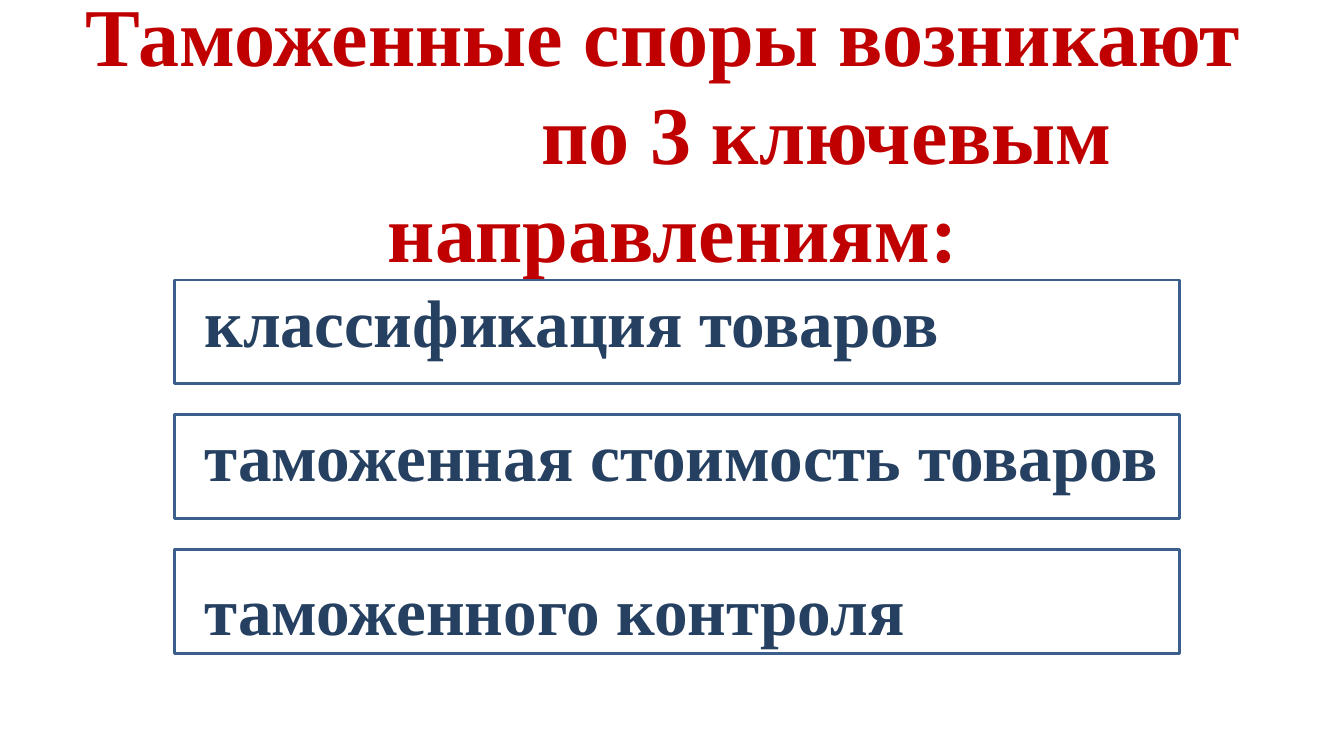
from pptx import Presentation
from pptx.dml.color import RGBColor
from pptx.enum.shapes import MSO_SHAPE
from pptx.enum.text import MSO_ANCHOR, PP_ALIGN
from pptx.util import Pt

RED = RGBColor(0xC0, 0x00, 0x00)
NAVY = RGBColor(0x25, 0x40, 0x61)
BLUE = RGBColor(0x3A, 0x5F, 0x8C)
WHITE = RGBColor(0xFF, 0xFF, 0xFF)
FONT = "Times New Roman"


def add_text(p, text, size=36, color=NAVY, align=PP_ALIGN.LEFT, spacing=None, left=0, right=0):
    """Write bold text into a paragraph with the given format."""
    p.alignment = align
    p.space_before = Pt(0)
    if spacing:
        p.line_spacing = Pt(spacing)
    pPr = p._p.get_or_add_pPr()
    pPr.set("marL", str(Pt(left)))
    pPr.set("marR", str(Pt(right)))
    r = p.add_run()
    r.text = text
    r.font.name = FONT
    r.font.size = Pt(size)
    r.font.bold = True
    r.font.color.rgb = color


def add_title(s, lines):
    """Place the title and write its lines, each with its own side margins."""
    sp = s.shapes.title
    sp.left, sp.top, sp.width, sp.height = Pt(36.5), Pt(36.5), Pt(648), Pt(68)
    tf = sp.text_frame
    tf.word_wrap = True
    tf.vertical_anchor = MSO_ANCHOR.MIDDLE
    for i, (text, left, right) in enumerate(lines):
        p = tf.add_paragraph() if i else tf.paragraphs[0]
        add_text(p, text, size=44, color=RED, align=PP_ALIGN.CENTER,
                 spacing=52.5, left=left, right=right)


def add_box(s, text, top, inset):
    """Add an outlined box with text starting at the given top inset."""
    sp = s.shapes.add_shape(MSO_SHAPE.RECTANGLE, Pt(93.5), Pt(top), Pt(538.5), Pt(55.5))
    sp.shadow.inherit = False
    sp.fill.solid()
    sp.fill.fore_color.rgb = WHITE
    sp.line.color.rgb = BLUE
    sp.line.width = Pt(1.5)
    tf = sp.text_frame
    tf.word_wrap = True
    tf.vertical_anchor = MSO_ANCHOR.TOP
    tf.margin_left, tf.margin_right = Pt(16), Pt(7.2)
    tf.margin_top, tf.margin_bottom = Pt(inset), Pt(0)
    add_text(tf.paragraphs[0], text)


def main():
    """Build the slide and save it."""
    prs = Presentation()
    prs.slide_width, prs.slide_height = Pt(720), Pt(405)
    s = prs.slides.add_slide(prs.slide_layouts[5])
    add_title(s, [("Таможенные споры возникают", 0, 10),
                  ("по 3 ключевым", 165, 0),
                  ("направлениям:", 0, 0)])
    boxes = [("классификация товаров", 0),
             ("таможенная стоимость товаров", 0),
             ("таможенного контроля", 10)]
    for i, (text, inset) in enumerate(boxes):
        add_box(s, text, 150 + 72.25 * i, inset)
    prs.save("out.pptx")


if __name__ == "__main__":
    main()
